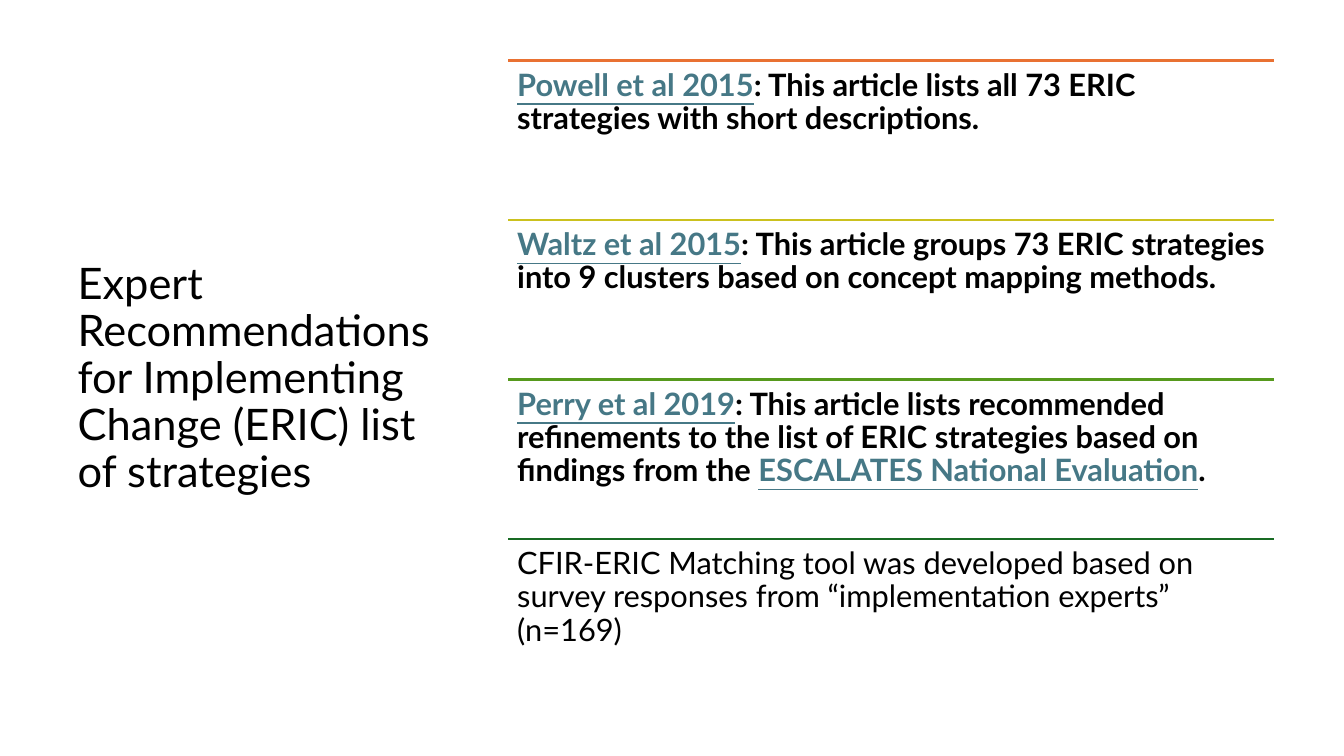
import pptx
import pptx.util
import pptx.dml.color
import pptx.enum.shapes
import pptx.enum.text
import pptx.oxml.ns
import lxml.etree

RGBColor = pptx.dml.color.RGBColor
BLACK = RGBColor(0x00, 0x00, 0x00)
TEAL = RGBColor(0x46, 0x78, 0x86)
ORANGE = RGBColor(0xE9, 0x71, 0x32)
LIME = RGBColor(0xCB, 0xC1, 0x1E)
GREEN = RGBColor(0x56, 0x99, 0x1D)
FOREST = RGBColor(0x19, 0x6B, 0x24)

# Each item: line colour, bold or not, and (text, is a reference) parts.
ITEMS = [
    (ORANGE, True, [
        ("Powell et al 2015", True),
        (": This article lists all 73 ERIC strategies with short descriptions.", False)]),
    (LIME, True, [
        ("Waltz et al 2015", True),
        (": This article groups 73 ERIC strategies into 9 clusters based on "
         "concept mapping methods.", False)]),
    (GREEN, True, [
        ("Perry et al 2019", True),
        (": This article lists recommended refinements to the list of ERIC "
         "strategies based on findings from the ", False),
        ("ESCALATES National Evaluation", True),
        (".", False)]),
    (FOREST, False, [
        ("CFIR-ERIC Matching tool was developed based on survey responses "
         "from “implementation experts” (n=169)", False)]),
]


def write(frame, parts, size, bold=False, font="Lato"):
    """Fill a text frame with one paragraph; references are teal and underlined."""
    para = frame.paragraphs[0]
    para.alignment = pptx.enum.text.PP_ALIGN.LEFT
    para.line_spacing = 0.9
    for text, ref in parts:
        run = para.add_run()
        run.text = text
        run.font.name = font
        run.font.size = pptx.util.Pt(size)
        run.font.bold = bold
        run.font.underline = ref
        run.font.color.rgb = TEAL if ref else BLACK


class Board:
    """Slide with a grid of 63 columns and 4 rows inside its margins."""

    LEFT, TOP = 0.67, 0.6
    COL, ROW = 0.19, 1.5825

    def __init__(self, deck):
        layout = deck.slide_layouts.get_by_name("Title Only")
        self.slide = deck.slides.add_slide(layout)

    def place(self, col, row):
        return (pptx.util.Inches(self.LEFT + col * self.COL),
                pptx.util.Inches(self.TOP + row * self.ROW))

    def box(self, col, row, cols, rows):
        left, top = self.place(col, row)
        right, base = self.place(col + cols, row + rows)
        return left, top, right - left, base - top

    def title(self, text, *cell):
        shape = self.slide.shapes.title
        shape.left, shape.top, shape.width, shape.height = self.box(*cell)
        frame = shape.text_frame
        frame.auto_size = pptx.enum.text.MSO_AUTO_SIZE.NONE
        frame.vertical_anchor = pptx.enum.text.MSO_ANCHOR.MIDDLE
        write(frame, [(text, False)], size=31)

    def rule(self, col, row, cols, color):
        line = self.slide.shapes.add_connector(
            pptx.enum.shapes.MSO_CONNECTOR.STRAIGHT,
            *self.place(col, row), *self.place(col + cols, row))
        line.line.color.rgb = color
        line.line.width = pptx.util.Pt(1.5)
        props = line.element.find(pptx.oxml.ns.qn("p:spPr"))
        lxml.etree.SubElement(props, pptx.oxml.ns.qn("a:effectLst"))

    def text(self, parts, *cell, bold):
        frame = self.slide.shapes.add_textbox(*self.box(*cell)).text_frame
        frame.word_wrap = True
        inset = pptx.util.Inches(0.09)
        frame.margin_left = frame.margin_right = inset
        frame.margin_top = frame.margin_bottom = inset
        write(frame, parts, size=22, bold=bold)


def main():
    deck = pptx.Presentation()
    deck.slide_width = pptx.util.Inches(13.33)
    deck.slide_height = pptx.util.Inches(7.5)
    board = Board(deck)
    board.title("Expert Recommendations for Implementing Change (ERIC) "
                "list of strategies", 0, 0, 20, 4)
    for row, (color, bold, parts) in enumerate(ITEMS):
        board.rule(23, row, 40, color)
        board.text(parts, 23, row, 40, 1, bold=bold)
    deck.save("out.pptx")


if __name__ == "__main__":
    main()
